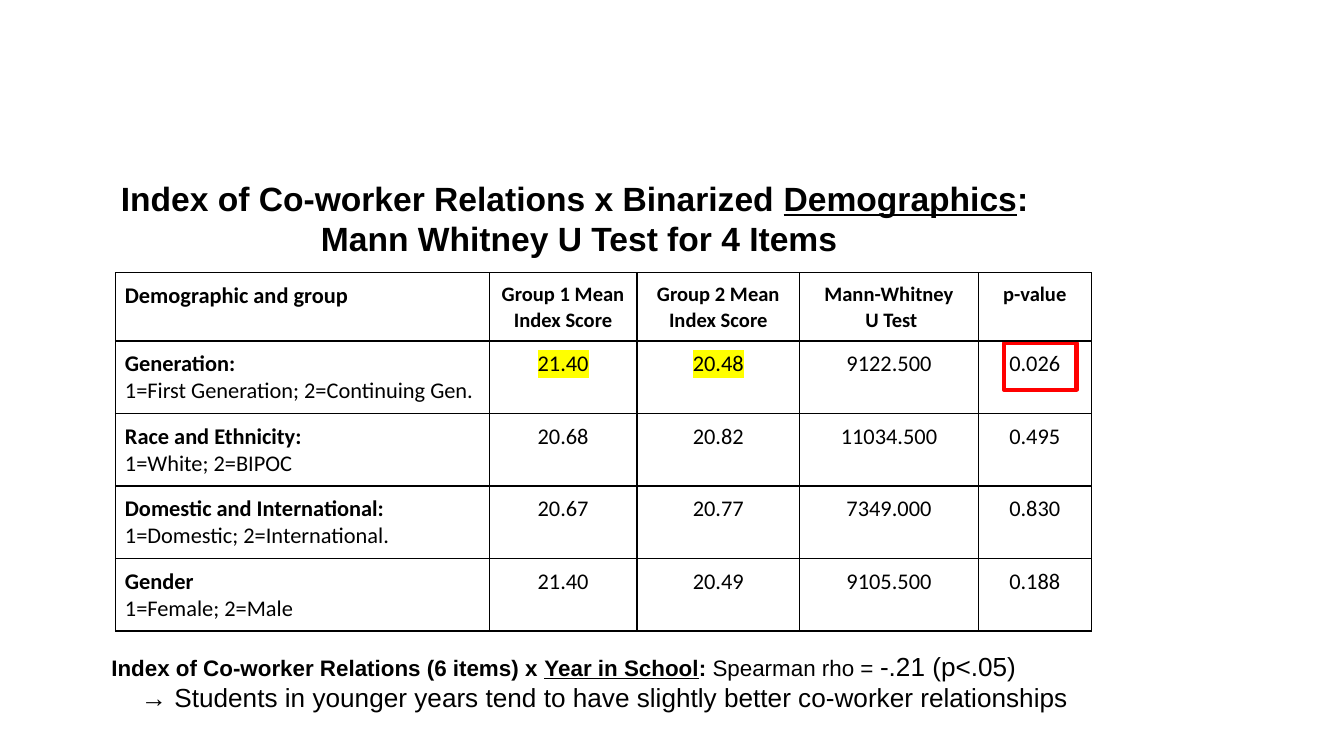
from lxml.etree import SubElement
from pptx import Presentation
from pptx.dml.color import RGBColor
from pptx.enum.shapes import MSO_SHAPE
from pptx.enum.text import MSO_AUTO_SIZE, PP_ALIGN
from pptx.oxml import parse_xml
from pptx.oxml.ns import nsdecls, qn
from pptx.util import Inches, Pt

BLACK = RGBColor(0x00, 0x00, 0x00)
RED = RGBColor(0xFF, 0x00, 0x00)
YELLOW = RGBColor(0xFF, 0xFF, 0x00)


def add_span(para, text, size, font="Arial", bold=False, underline=False):
    span = para.add_run()
    span.text = text
    span.font.size = Pt(size)
    span.font.name = font
    span.font.bold = bold
    span.font.underline = underline
    span.font.color.rgb = BLACK
    return span


def add_text_box(left, top, width, height):
    box = page.shapes.add_textbox(Inches(left), Inches(top), Inches(width), Inches(height))
    box.text_frame.word_wrap = True
    box.text_frame.auto_size = MSO_AUTO_SIZE.SHAPE_TO_FIT_TEXT
    return box.text_frame


# Widescreen page, 16:9
deck = Presentation()
deck.slide_width = Inches(10)
deck.slide_height = Inches(10 * 9 / 16)
page = deck.slides.add_slide(deck.slide_layouts[6])

# Title
title = add_text_box(0.28, 1.22, 7.99, 0.81)
title.margin_top = title.margin_bottom = Inches(0.1)
first, second = title.paragraphs[0], title.add_paragraph()
first.alignment = second.alignment = PP_ALIGN.CENTER
add_span(first, "Index of Co-worker Relations x Binarized ", 18, bold=True)
add_span(first, "Demographics", 18, bold=True, underline=True)
add_span(first, ":", 18, bold=True)
add_span(second, " Mann Whitney U Test for 4 Items", 18, bold=True)

# Red frame around the significant p-value
frame = page.shapes.add_shape(
    MSO_SHAPE.RECTANGLE, Inches(7.47), Inches(2.55), Inches(0.54), Inches(0.35))
frame.shadow.inherit = False
frame.fill.background()
frame.line.color.rgb = RED
frame.line.width = Pt(2.25)

# Test results: one row per demographic, lines of a cell split by a newline
ROWS = [
    ["Demographic and group", "Group 1 Mean\nIndex Score", "Group 2 Mean\nIndex Score",
     "Mann-Whitney\n U Test", "p-value"],
    ["Generation:\n1=First Generation; 2=Continuing Gen.", "21.40", "20.48", "9122.500", "0.026"],
    ["Race and Ethnicity:\n1=White; 2=BIPOC", "20.68", "20.82", "11034.500", "0.495"],
    ["Domestic and International:\n1=Domestic; 2=International.",
     "20.67", "20.77", "7349.000", "0.830"],
    ["Gender\n1=Female; 2=Male", "21.40", "20.49", "9105.500", "0.188"],
]
COLUMN_WIDTHS = [2.78, 1.1, 1.21, 1.33, 0.84]
ROW_HEIGHTS = [0.41, 0.44, 0.38, 0.36, 0.47]  # minimum heights, rows grow with their text
HIGHLIGHTED = [(1, 1), (1, 2)]

table = page.shapes.add_table(
    len(ROWS), len(COLUMN_WIDTHS), Inches(0.86), Inches(2.03), Inches(7.26), Inches(2.66)).table
table.first_row = table.horz_banding = False
for column, width in zip(table.columns, COLUMN_WIDTHS):
    column.width = Inches(width)

for r, row in enumerate(ROWS):
    table.rows[r].height = Inches(ROW_HEIGHTS[r])
    for c, text in enumerate(row):
        cell = table.cell(r, c)
        cell.margin_left = cell.margin_right = Inches(0.07)
        cell.margin_top = cell.margin_bottom = Inches(0.07)
        for n, line in enumerate(text.split("\n")):
            para = cell.text_frame.add_paragraph() if n else cell.text_frame.paragraphs[0]
            if c:
                para.alignment = PP_ALIGN.CENTER
            else:
                para.alignment = PP_ALIGN.LEFT if r == 1 else PP_ALIGN.JUSTIFY
            size = 11 if r == 0 and c else 12
            bold = r == 0 or (c == 0 and n == 0)
            span = add_span(para, line, size, "Calibri", bold)
            if (r, c) in HIGHLIGHTED:
                span.font._element.find(qn("a:solidFill")).addnext(parse_xml(
                    f'<a:highlight {nsdecls("a")}><a:srgbClr val="{YELLOW}"/></a:highlight>'))
        # Borders go ahead of the cell fill
        properties = cell._tc.get_or_add_tcPr()
        for side in ("lnL", "lnR", "lnT", "lnB"):
            border = SubElement(properties, qn(f"a:{side}"), w=str(Pt(0.83)))
            SubElement(SubElement(border, qn("a:solidFill")), qn("a:srgbClr"), val=str(BLACK))
        cell.fill.background()

# Correlation note below the table
note = add_text_box(0.73, 4.79, 7.68, 0.57)
finding, meaning = note.paragraphs[0], note.add_paragraph()
add_span(finding, "Index of Co-worker Relations (6 items) x ", 12, bold=True)
add_span(finding, "Year in School", 12, bold=True, underline=True)
add_span(finding, ": ", 12, bold=True)
add_span(finding, "Spearman rho = ", 12)
add_span(finding, "-.21 (p<.05)", 14)
meaning._p.get_or_add_pPr().set("marL", str(Inches(0.22)))
add_span(meaning, "→ Students in younger years tend to have slightly better co-worker relationships", 14)

deck.save("out.pptx")
